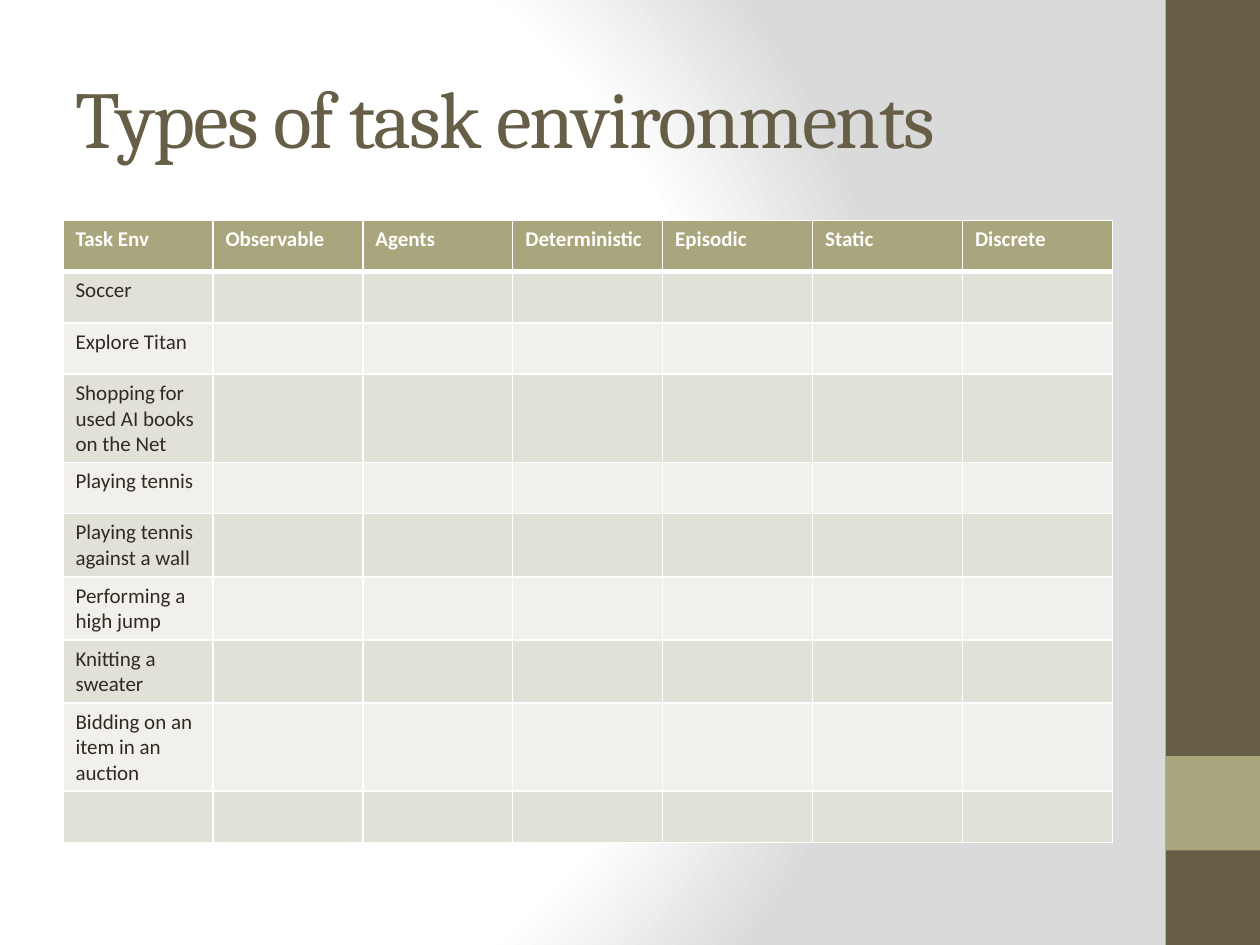
from lxml.etree import SubElement
from pptx import Presentation
from pptx.dml.color import RGBColor
from pptx.enum.shapes import MSO_SHAPE
from pptx.enum.text import MSO_ANCHOR
from pptx.oxml import parse_xml
from pptx.oxml.ns import nsdecls, qn
from pptx.util import Inches, Pt

BROWN, OLIVE, INK, WHITE = "675E47", "A9A57C", "2F2B20", "FFFFFF"
BANDS = ("E2E1D7", "F1F0EC")
HEADINGS = ("Task Env", "Observable", "Agents", "Deterministic",
            "Episodic", "Static", "Discrete")
TASKS = ("Soccer", "Explore Titan", "Shopping for used AI books on the Net",
         "Playing tennis", "Playing tennis against a wall",
         "Performing a high jump", "Knitting a sweater",
         "Bidding on an item in an auction", "")


def color(value):
    return RGBColor.from_string(value)


class SlideBuilder:
    """Draws on one slide; boxes are (left, top, width, height) as slide shares."""
    heading_font, body_font = "Cambria", "Calibri"

    def __init__(self, presentation):
        self.width = presentation.slide_width
        self.height = presentation.slide_height
        self.slide = presentation.slides.add_slide(presentation.slide_layouts[6])

    def place(self, box):
        left, top, width, height = box
        return (round(left * self.width), round(top * self.height),
                round(width * self.width), round(height * self.height))

    def style(self, paragraph, font, size, text_color, bold=False):
        paragraph.font.name = font
        paragraph.font.size = Pt(size)
        paragraph.font.bold = bold
        paragraph.font.color.rgb = color(text_color)

    def radial_background(self, stops, center):
        """Stops are (percent, color); center is left, top, right, bottom percent."""
        self.slide.background.fill.gradient()
        properties = self.slide.element.find(".//" + qn("p:bgPr"))
        stop_xml = "".join(
            f'<a:gs pos="{percent * 1000}"><a:srgbClr val="{value}"/></a:gs>'
            for percent, value in stops)
        edges = " ".join(f'{side}="{percent * 1000}"'
                         for side, percent in zip("ltrb", center))
        gradient = parse_xml(
            f'<a:gradFill {nsdecls("a")} rotWithShape="1"><a:gsLst>{stop_xml}</a:gsLst>'
            f'<a:path path="circle"><a:fillToRect {edges}/></a:path></a:gradFill>')
        properties.replace(properties.find(qn("a:gradFill")), gradient)

    def rectangle(self, box, fill):
        shape = self.slide.shapes.add_shape(MSO_SHAPE.RECTANGLE, *self.place(box))
        shape.shadow.inherit = False
        shape.fill.solid()
        shape.fill.fore_color.rgb = color(fill)
        shape.line.fill.background()

    def title(self, box, text):
        frame = self.slide.shapes.add_textbox(*self.place(box)).text_frame
        frame.word_wrap = True
        frame.vertical_anchor = MSO_ANCHOR.MIDDLE
        paragraph = frame.paragraphs[0]
        run = paragraph.add_run()
        run.text = text
        self.style(paragraph, self.heading_font, 46, BROWN)
        run.font._element.set("spc", "-100")

    def borders(self, cell, bottom):
        properties = cell._tc.get_or_add_tcPr()
        for side, points in (("L", 1), ("R", 1), ("T", 1), ("B", bottom)):
            line = SubElement(properties, qn(f"a:ln{side}"), w=str(Pt(points)))
            fill = SubElement(line, qn("a:solidFill"))
            SubElement(fill, qn("a:srgbClr"), val=WHITE)

    def table(self, box, rows):
        """Header row first, then banded rows."""
        table = self.slide.shapes.add_table(
            len(rows), len(rows[0]), *self.place(box)).table
        for row_index, texts in enumerate(rows):
            header = row_index == 0
            fill = OLIVE if header else BANDS[(row_index - 1) % 2]
            for column_index, text in enumerate(texts):
                cell = table.cell(row_index, column_index)
                cell.text = text
                self.style(cell.text_frame.paragraphs[0], self.body_font, 12,
                           WHITE if header else INK, header)
                # The rule under the header is shared with the row below it.
                self.borders(cell, 3 if header else 1)
                if row_index == 1:
                    cell._tc.tcPr.find(qn("a:lnT")).set("w", str(Pt(3)))
                cell.fill.solid()
                cell.fill.fore_color.rgb = color(fill)


def main():
    presentation = Presentation()
    presentation.slide_width, presentation.slide_height = Inches(10), Inches(7.5)
    builder = SlideBuilder(presentation)
    builder.radial_background(((0, WHITE), (75, WHITE), (100, "DADADA")),
                              (20, 50, 100, 50))
    builder.rectangle((0.925, 0, 0.075, 1), BROWN)
    builder.rectangle((0.925, 0.8, 0.075, 0.1), OLIVE)
    builder.title((0.05, 0.04, 0.833, 1 / 6), "Types of task environments")
    blanks = ("",) * (len(HEADINGS) - 1)
    rows = [HEADINGS] + [(task,) + blanks for task in TASKS]
    builder.table((0.05, 1.75 / 7.5, 0.833, 4.07 / 7.5), rows)
    presentation.save("out.pptx")


if __name__ == "__main__":
    main()
